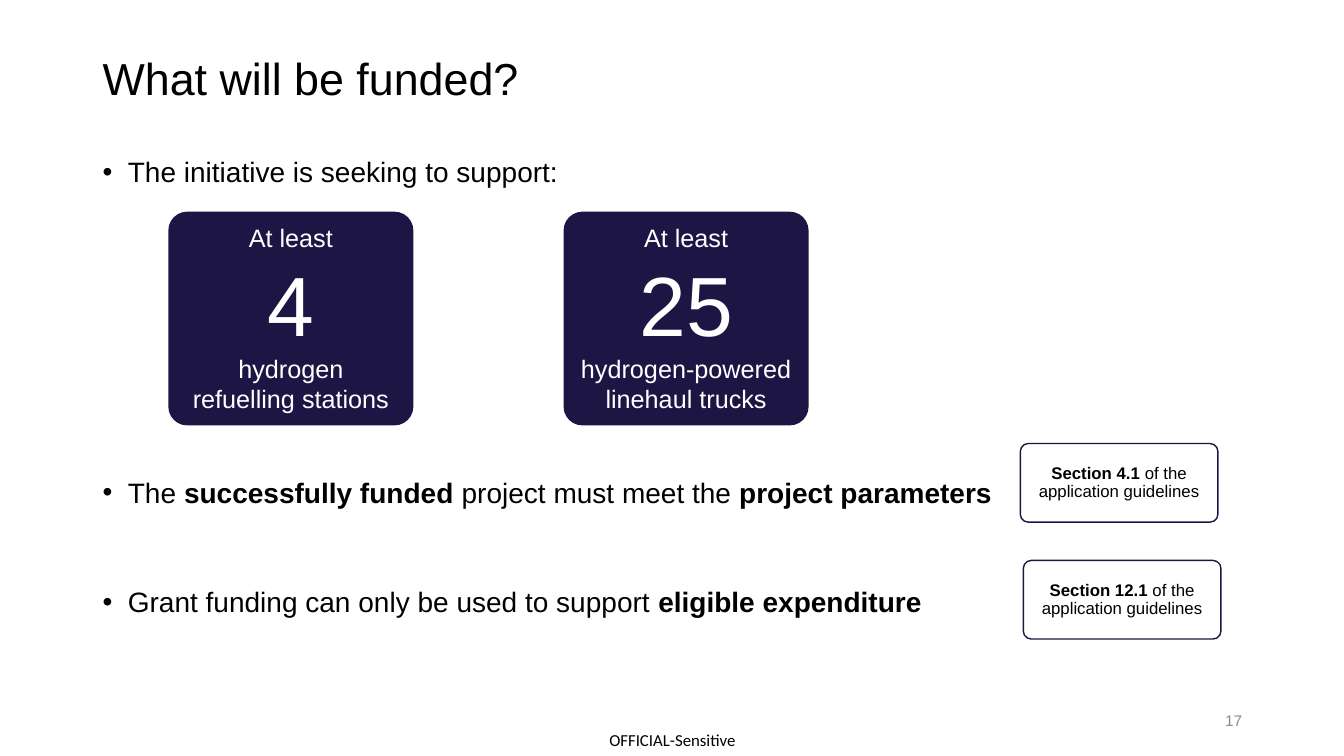
from dataclasses import dataclass

from lxml import etree
from pptx import Presentation
from pptx.dml.color import RGBColor
from pptx.enum.shapes import MSO_SHAPE
from pptx.enum.text import MSO_ANCHOR, PP_ALIGN
from pptx.oxml.ns import qn
from pptx.util import Inches, Pt

ROUNDED = MSO_SHAPE.ROUNDED_RECTANGLE
TOP, MIDDLE = MSO_ANCHOR.TOP, MSO_ANCHOR.MIDDLE
LEFT, CENTER, RIGHT = PP_ALIGN.LEFT, PP_ALIGN.CENTER, PP_ALIGN.RIGHT


@dataclass(frozen=True)
class Theme:
    """Colours, fonts and type sizes of the slide."""
    navy: RGBColor = RGBColor(0x1D, 0x16, 0x45)
    white: RGBColor = RGBColor(0xFF, 0xFF, 0xFF)
    black: RGBColor = RGBColor(0, 0, 0)
    grey: RGBColor = RGBColor(0x8C, 0x8C, 0x8C)
    font: str = "Arial"
    marking_font: str = "Calibri"
    title: int = 32
    body: int = 20
    card: int = 18
    figure: int = 60
    small: int = 12
    page: int = 11


THEME = Theme()


def set_frame(shape, anchor, margins=(0.1, 0.05)):
    """Wrap the text of a shape, anchor it and set its side and end margins."""
    frame = shape.text_frame
    frame.word_wrap = True
    frame.vertical_anchor = anchor
    frame.margin_left = frame.margin_right = Inches(margins[0])
    frame.margin_top = frame.margin_bottom = Inches(margins[1])
    return frame


def style_paragraph(paragraph, size, color, align=LEFT, font=THEME.font):
    """Set alignment and the font of every run in a paragraph."""
    paragraph.alignment = align
    for run in paragraph.runs:
        run.font.name = font
        run.font.size = Pt(size)
        run.font.color.rgb = color


def add_runs(paragraph, runs):
    """Add (text, bold) runs to a paragraph."""
    for text, bold in runs:
        run = paragraph.add_run()
        run.text = text
        run.font.bold = bold


def add_label(slide, box, text, size, color, align=LEFT, font=THEME.font, margins=(0.1, 0.05)):
    """Add a one-paragraph text box, centred vertically."""
    shape = slide.shapes.add_textbox(*map(Inches, box))
    frame = set_frame(shape, MIDDLE, margins)
    frame.text = text
    style_paragraph(frame.paragraphs[0], size, color, align, font)
    return frame.paragraphs[0]


def add_rounded_box(slide, box, fill, corner):
    """Add a filled rounded rectangle without a shadow."""
    shape = slide.shapes.add_shape(ROUNDED, *map(Inches, box))
    shape.adjustments[0] = corner
    shape.shadow.inherit = False
    shape.fill.solid()
    shape.fill.fore_color.rgb = fill
    return shape


def add_bullets(slide, box, bullets):
    """Add bulleted paragraphs given as (space before, runs)."""
    shape = slide.shapes.add_textbox(*map(Inches, box))
    frame = set_frame(shape, TOP)
    for index, (space, runs) in enumerate(bullets):
        paragraph = frame.add_paragraph() if index else frame.paragraphs[0]
        properties = paragraph._p.get_or_add_pPr()
        properties.set("marL", str(Inches(0.25)))
        properties.set("indent", str(Inches(-0.25)))
        etree.SubElement(properties, qn("a:buFont")).set("typeface", THEME.font)
        etree.SubElement(properties, qn("a:buChar")).set("char", "•")
        paragraph.line_spacing = 1.2
        paragraph.space_before = Pt(space)
        add_runs(paragraph, runs)
        style_paragraph(paragraph, THEME.body, THEME.black)


def add_card(slide, left, figure, caption):
    """Add a navy card with a large figure."""
    shape = add_rounded_box(slide, (left, 2.1, 2.43, 2.12), THEME.navy, 0.088)
    shape.line.fill.background()
    frame = set_frame(shape, TOP)
    frame.text = "\n".join(["At least", figure, *caption])
    for paragraph in frame.paragraphs:
        size = THEME.figure if paragraph.text == figure else THEME.card
        style_paragraph(paragraph, size, THEME.white, CENTER)


def add_reference(slide, left, top, section):
    """Add an outlined box that points to a section of the guidelines."""
    shape = add_rounded_box(slide, (left, top, 1.96, 0.78), THEME.white, 0.1)
    shape.line.color.rgb = THEME.navy
    shape.line.width = Pt(1)
    paragraph = set_frame(shape, MIDDLE, (0.05, 0.04)).paragraphs[0]
    paragraph.line_spacing = 0.9
    add_runs(paragraph, [(f"Section {section} ", True), ("of the application guidelines", False)])
    style_paragraph(paragraph, THEME.small, THEME.black, CENTER)


def main():
    """Build the slide and save it."""
    presentation = Presentation()
    presentation.slide_width, presentation.slide_height = Inches(13.33), Inches(7.5)
    slide = presentation.slides.add_slide(presentation.slide_layouts[6])
    add_label(slide, (5.86, 7.18, 1.62, 0.32), "OFFICIAL-Sensitive", THEME.small,
              THEME.black, CENTER, THEME.marking_font, (0, 0))
    title = add_label(slide, (0.92, 0.4, 11.5, 0.81), "What will be funded?", THEME.title, THEME.black)
    title.line_spacing = 0.9
    add_bullets(slide, (0.92, 1.42, 11.5, 4.79), [
        (0, [("The initiative is seeking to support:", False)]),
        (200, [("The ", False), ("successfully funded ", True),
               ("project must meet the ", False), ("project parameters", True)]),
        (49.5, [("Grant funding can only be used to support ", False),
                ("eligible expenditure", True)]),
    ])
    add_label(slide, (9.42, 6.95, 3, 0.4), "17", THEME.page, THEME.grey, RIGHT)
    add_card(slide, 1.67, "4", ["hydrogen refuelling stations"])
    add_card(slide, 5.59, "25", ["hydrogen-powered", "linehaul trucks"])
    add_reference(slide, 10.15, 5.56, "12.1")
    add_reference(slide, 10.12, 4.4, "4.1")
    presentation.save("out.pptx")


if __name__ == "__main__":
    main()
